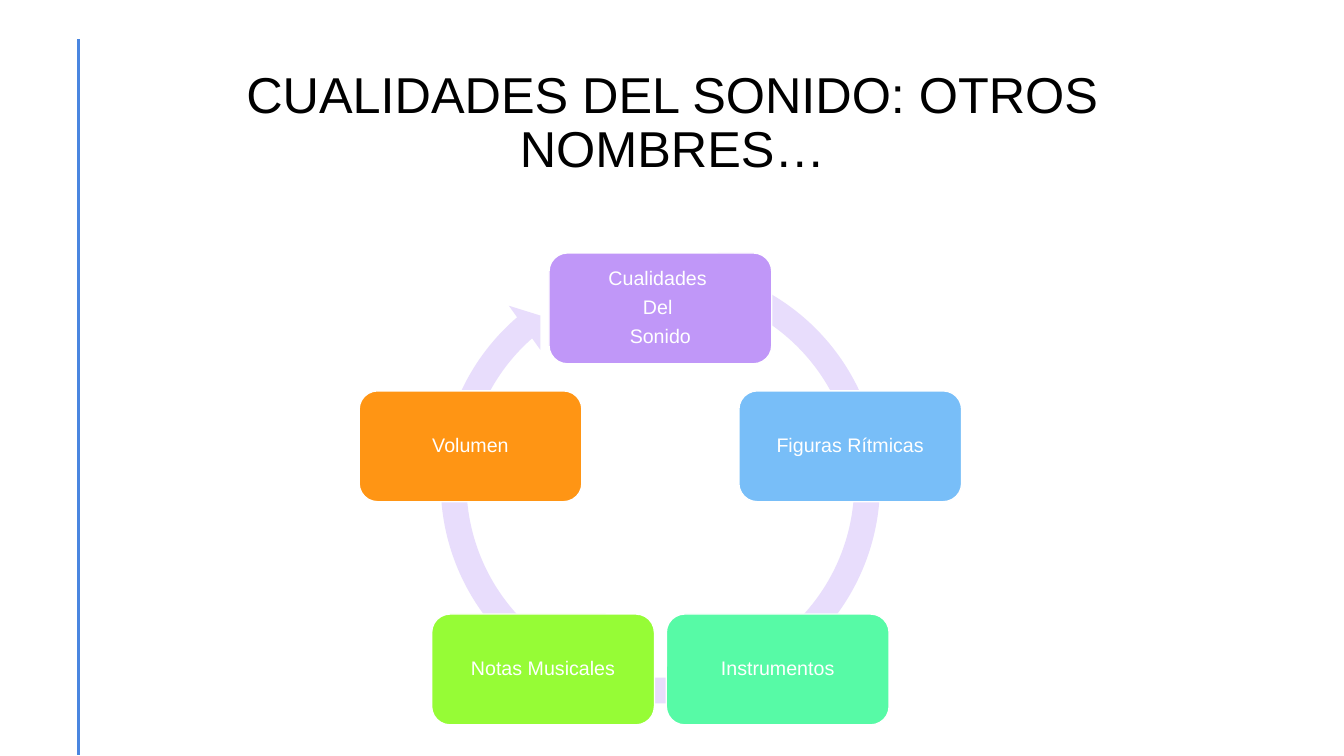
from math import cos, radians, sin

from lxml import etree
from pptx import Presentation
from pptx.dml.color import RGBColor
from pptx.enum.shapes import MSO_CONNECTOR, MSO_SHAPE
from pptx.enum.text import MSO_ANCHOR, MSO_AUTO_SIZE, PP_ALIGN
from pptx.oxml.ns import qn
from pptx.util import Inches, Pt

STRAIGHT = MSO_CONNECTOR.STRAIGHT
ROUNDED = MSO_SHAPE.ROUNDED_RECTANGLE
CIRCULAR_ARROW = MSO_SHAPE.CIRCULAR_ARROW
MIDDLE = MSO_ANCHOR.MIDDLE
CENTER = PP_ALIGN.CENTER
NO_AUTOFIT = MSO_AUTO_SIZE.NONE
TITLE_ONLY = 5

COLORS = {
    "rule": "4A86E0",
    "title": "000000",
    "white": "FFFFFF",
    "ring": "E8DDFC",
    "purple": "C097F8",
    "blue": "78BEF8",
    "mint": "57FAA6",
    "lime": "96FC36",
    "orange": "FF9514",
}

# Clockwise from the top: fill and text lines
NODES = [
    ("purple", ["Cualidades ", "Del ", "Sonido"]),
    ("blue", ["Figuras Rítmicas"]),
    ("mint", ["Instrumentos"]),
    ("lime", ["Notas Musicales"]),
    ("orange", ["Volumen"]),
]
CYCLE_X, CYCLE_Y, CYCLE_RADIUS = 6.55, 5.04, 1.98
NODE_WIDTH, NODE_HEIGHT = 2.21, 1.1


class SlideBuilder:
    font = "Arial"

    def __init__(self, page):
        self.page = page

    def color(self, name):
        return RGBColor.from_string(COLORS[name])

    def add_text(self, frame, lines, size, color, space_after=0):
        frame.word_wrap = True
        frame.auto_size = NO_AUTOFIT
        frame.vertical_anchor = MIDDLE
        for index, line in enumerate(lines):
            para = frame.add_paragraph() if index else frame.paragraphs[0]
            para.alignment = CENTER
            para.line_spacing = 0.9
            para.space_before = Pt(0)
            para.space_after = Pt(space_after)
            span = para.add_run()
            span.text = line
            span.font.name = self.font
            span.font.size = Pt(size)
            span.font.color.rgb = self.color(color)

    def title(self, text, left, top, width, height):
        box = self.page.shapes.title
        box.left, box.top = Inches(left), Inches(top)
        box.width, box.height = Inches(width), Inches(height)
        self.add_text(box.text_frame, [text], 36, "title")

    def rule(self, x, top, bottom):
        line = self.page.shapes.add_connector(
            STRAIGHT, Inches(x), Inches(top), Inches(x), Inches(bottom))
        line.line.color.rgb = self.color("rule")
        line.line.width = Pt(2)
        etree.SubElement(line._element.spPr, qn("a:effectLst"))

    def shape(self, kind, left, top, width, height, fill):
        box = self.page.shapes.add_shape(
            kind, Inches(left), Inches(top), Inches(width), Inches(height))
        box.shadow.inherit = False
        box.fill.solid()
        box.fill.fore_color.rgb = self.color(fill)
        return box

    def ring(self, left, top, size):
        arrow = self.shape(CIRCULAR_ARROW, left, top, size, size, "ring")
        arrow.line.fill.background()
        for index, value in enumerate((0.055, 3.307, 137.386, 174.087, 0.058)):
            arrow.adjustments[index] = value

    def node(self, center_x, center_y, fill, lines):
        box = self.shape(ROUNDED, center_x - NODE_WIDTH / 2,
                         center_y - NODE_HEIGHT / 2,
                         NODE_WIDTH, NODE_HEIGHT, fill)
        box.line.color.rgb = self.color("white")
        box.line.width = Pt(1)
        frame = box.text_frame
        frame.margin_left = frame.margin_right = Inches(0.06)
        frame.margin_top = frame.margin_bottom = Inches(0.06)
        self.add_text(frame, lines, 14, "white", space_after=5.6)


def main():
    deck = Presentation()
    deck.slide_width, deck.slide_height = Inches(13.33), Inches(7.5)
    builder = SlideBuilder(deck.slides.add_slide(deck.slide_layouts[TITLE_ONLY]))

    # Side rule and title
    builder.rule(0.78, 0.39, 7.49)
    builder.title("CUALIDADES DEL SONIDO: OTROS NOMBRES…", 0.92, 0.61, 11.5, 1.24)

    # Cycle: arrow ring with evenly spaced nodes
    builder.ring(4.23, 2.48, 4.64)
    for index, (fill, lines) in enumerate(NODES):
        angle = radians(index * 360 / len(NODES))
        builder.node(CYCLE_X + CYCLE_RADIUS * sin(angle),
                     CYCLE_Y - CYCLE_RADIUS * cos(angle), fill, lines)

    deck.save("out.pptx")


if __name__ == "__main__":
    main()
